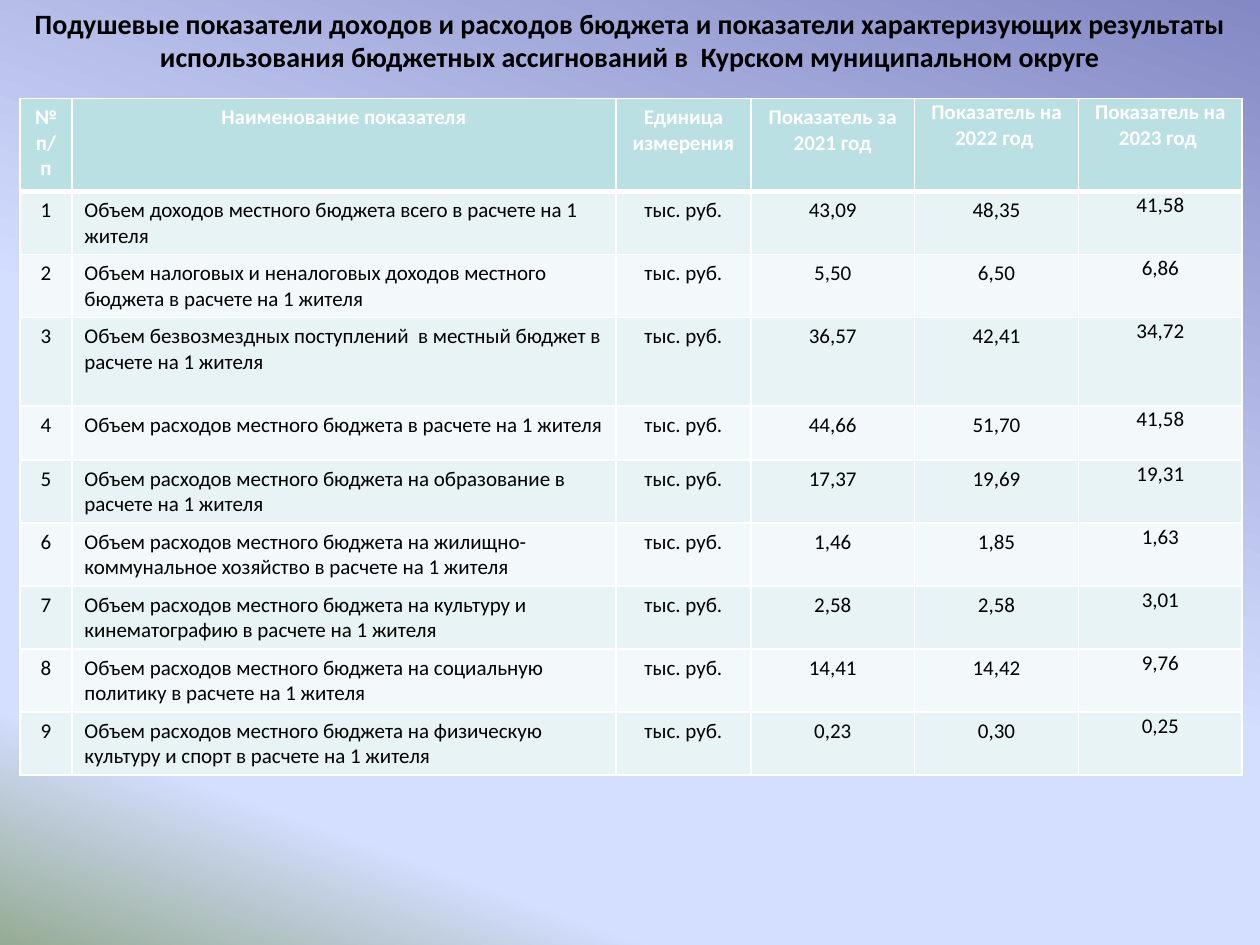
from dataclasses import dataclass

from lxml.etree import SubElement
from pptx import Presentation
from pptx.dml.color import RGBColor
from pptx.enum.text import PP_ALIGN
from pptx.oxml.ns import qn
from pptx.util import Inches, Pt


@dataclass(frozen=True)
class Theme:
    font: str = "Calibri"
    title_size: int = 16
    table_size: int = 12
    text: str = "000000"
    light: str = "FFFFFF"
    header: str = "BBE0E3"
    bands: tuple = ("E7F3F4", "F3F9FA")
    backdrop: tuple = ((0, "8488C4"), (53, "D4DEFF"), (83, "D4DEFF"), (100, "96AB94"))
    backdrop_angle: int = 110


THEME = Theme()

TITLE = (
    "Подушевые показатели доходов и расходов бюджета и показатели характеризующих "
    "результаты использования бюджетных ассигнований в  Курском муниципальном округе"
)
HEADINGS = ("№ п/п", "Наименование показателя", "Единица измерения",
            "Показатель за 2021 год", "Показатель на 2022 год ", "Показатель на 2023 год ")
UNIT = "тыс. руб."
INDICATORS = (
    ("Объем доходов местного бюджета всего в расчете на 1 жителя", "43,09", "48,35", "41,58"),
    ("Объем налоговых и неналоговых доходов местного бюджета в расчете на 1 жителя",
     "5,50", "6,50", "6,86"),
    ("Объем безвозмездных поступлений  в местный бюджет в расчете на 1 жителя",
     "36,57", "42,41", "34,72"),
    ("Объем расходов местного бюджета в расчете на 1 жителя", "44,66", "51,70", "41,58"),
    ("Объем расходов местного бюджета на образование в расчете на 1 жителя",
     "17,37", "19,69", "19,31"),
    ("Объем расходов местного бюджета на жилищно-коммунальное хозяйство в расчете на 1 жителя",
     "1,46", "1,85", "1,63"),
    ("Объем расходов местного бюджета на культуру и кинематографию в расчете на 1 жителя",
     "2,58", "2,58", "3,01"),
    ("Объем расходов местного бюджета на социальную политику в расчете на 1 жителя",
     "14,41", "14,42", "9,76"),
    ("Объем расходов местного бюджета на физическую культуру и спорт в расчете на 1 жителя",
     "0,23", "0,30", "0,25"),
)
COLUMN_WIDTHS = (0.41, 4.32, 1.07, 1.3, 1.3, 1.3)
ROW_HEIGHTS = (0.74, 0.5, 0.5, 0.7, 0.43, 0.5, 0.5, 0.5, 0.5, 0.5)
NAME_COLUMN = 1
TIGHT_MARGINS = {
    "margin_left": Inches(0.01),
    "margin_top": Inches(0.01),
    "margin_right": Inches(0.01),
    "margin_bottom": Inches(0),
}


def apply_format(target, values):
    for name, value in values.items():
        setattr(target, name, value)


def write_text(frame, text, size, color, bold, alignment=PP_ALIGN.CENTER):
    para = frame.paragraphs[0]
    para.alignment = alignment
    span = para.add_run()
    span.text = text
    apply_format(span.font, {"name": THEME.font, "size": Pt(size), "bold": bold})
    span.font.color.rgb = RGBColor.from_string(color)


def paint_background(page):
    fill = page.background.fill
    fill.gradient()
    # python-pptx counts the angle counter-clockwise
    fill.gradient_angle = 360 - THEME.backdrop_angle
    stops = page.element.find(".//" + qn("a:gsLst"))
    stops.clear()
    for position, color in THEME.backdrop:
        stop = SubElement(stops, qn("a:gs"), pos=str(position * 1000))
        SubElement(stop, qn("a:srgbClr"), val=color)


def add_title(page, left, top, width, height):
    box = page.shapes.add_textbox(left, top, width, height)
    box.text_frame.word_wrap = True
    write_text(box.text_frame, TITLE, THEME.title_size, THEME.text, True)


def style_cell(cell, color, bottom_width):
    """Draw the cell's four borders, then its fill."""
    properties = cell._tc.get_or_add_tcPr()
    widths = {"a:lnL": 1, "a:lnR": 1, "a:lnT": 1, "a:lnB": bottom_width}
    for side, width in widths.items():
        line = SubElement(properties, qn(side), w=str(Pt(width)))
        paint = SubElement(line, qn("a:solidFill"))
        SubElement(paint, qn("a:srgbClr"), val=THEME.light)
    cell.fill.solid()
    cell.fill.fore_color.rgb = RGBColor.from_string(color)


def add_indicator_table(page, left, top, width, height):
    rows = [HEADINGS] + [
        (str(number), name, UNIT, *values)
        for number, (name, *values) in enumerate(INDICATORS, start=1)
    ]
    table = page.shapes.add_table(len(rows), len(HEADINGS), left, top, width, height).table
    for column, column_width in zip(table.columns, COLUMN_WIDTHS):
        column.width = Inches(column_width)
    for row, row_height in zip(table.rows, ROW_HEIGHTS):
        row.height = Inches(row_height)

    for row_index, texts in enumerate(rows):
        is_header = row_index == 0
        fill = THEME.header if is_header else THEME.bands[(row_index - 1) % 2]
        color = THEME.light if is_header else THEME.text
        first_tight_column = 4 if is_header else 5
        for column_index, text in enumerate(texts):
            cell = table.cell(row_index, column_index)
            is_name = column_index == NAME_COLUMN and not is_header
            alignment = PP_ALIGN.LEFT if is_name else PP_ALIGN.CENTER
            if column_index >= first_tight_column:
                apply_format(cell, TIGHT_MARGINS)
            style_cell(cell, fill, 3 if is_header else 1)
            if row_index == 1:
                cell._tc.tcPr.find(qn("a:lnT")).set("w", str(Pt(3)))
            write_text(cell.text_frame, text, THEME.table_size, color, is_header, alignment)


def main():
    deck = Presentation()
    deck.slide_width, deck.slide_height = Inches(10), Inches(7.5)
    page = deck.slides.add_slide(deck.slide_layouts[6])
    paint_background(page)
    add_title(page, Inches(0), Inches(0), Inches(10), Inches(0.64))
    add_indicator_table(page, Inches(0.16), Inches(0.78),
                        Inches(sum(COLUMN_WIDTHS)), Inches(sum(ROW_HEIGHTS)))
    deck.save("out.pptx")


if __name__ == "__main__":
    main()
